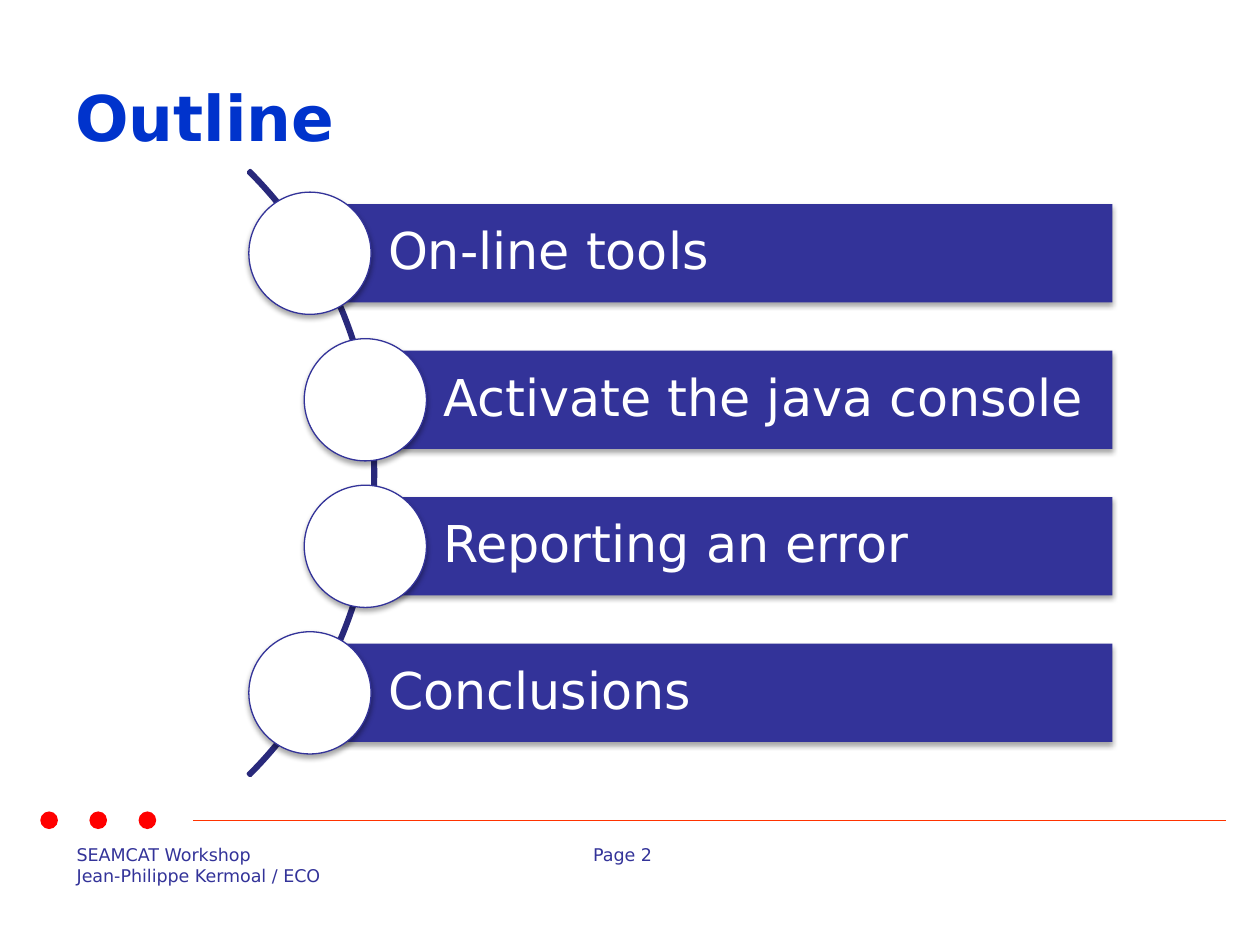
from dataclasses import dataclass

from lxml import etree
from pptx import Presentation
from pptx.dml.color import RGBColor
from pptx.enum.shapes import MSO_CONNECTOR as Connector, MSO_SHAPE as Preset
from pptx.enum.text import MSO_ANCHOR as Anchor, MSO_AUTO_SIZE as AutoSize, PP_ALIGN as Align
from pptx.oxml import parse_xml
from pptx.oxml.ns import nsdecls, qn
from pptx.util import Inches, Pt

FONT = "DejaVu Sans"
INDIGO, WHITE, RED = "333399", "FFFFFF", "FF0000"

BAR_TOP, BAR_STEP, BAR_HEIGHT, BAR_RIGHT = 1.62, 1.163, 0.78, 8.83
CIRCLE_SIZE = 0.97


@dataclass
class Topic:
    text: str
    left: float


TOPICS = [
    Topic("On-line tools", 2.46),
    Topic("Activate the java console", 2.9),
    Topic("Reporting an error", 2.9),
    Topic("Conclusions", 2.46),
]


def color(value: str) -> RGBColor:
    return RGBColor.from_string(value)


def add_span(para, text: str, size: float, ink: str, bold: bool = False) -> None:
    span = para.add_run()
    span.text = text
    span.font.name = FONT
    span.font.size = Pt(size)
    span.font.bold = bold
    span.font.color.rgb = color(ink)


def add_shape(page, preset, left: float, top: float, width: float, height: float,
              fill: str = "", line: str = "", weight: float = 0.75):
    shape = page.shapes.add_shape(
        preset, Inches(left), Inches(top), Inches(width), Inches(height))
    shape.shadow.inherit = False
    if fill:
        shape.fill.solid()
        shape.fill.fore_color.rgb = color(fill)
    else:
        shape.fill.background()
    if line:
        shape.line.color.rgb = color(line)
        shape.line.width = Pt(weight)
    else:
        shape.line.fill.background()
    return shape


def add_shadow(shape) -> None:
    effects = shape._element.spPr.find(qn("a:effectLst"))
    effects.append(parse_xml(
        f'<a:outerShdw {nsdecls("a")} blurRad="{Pt(3.1)}" dist="{Pt(1.8)}" '
        'dir="5400000" rotWithShape="0"><a:srgbClr val="000000">'
        '<a:alpha val="35000"/></a:srgbClr></a:outerShdw>'))


def add_footer(page, left: float, width: float, height: float, lines: list[str]) -> None:
    box = page.shapes.add_textbox(
        Inches(left), Inches(6.65), Inches(width), Inches(height))
    frame = box.text_frame
    frame.word_wrap = False
    frame.auto_size = AutoSize.SHAPE_TO_FIT_TEXT
    for index, line in enumerate(lines):
        para = frame.add_paragraph() if index else frame.paragraphs[0]
        add_span(para, line, 10, INDIGO)


def add_topic(page, topic: Topic, top: float) -> None:
    bar = add_shape(page, Preset.RECTANGLE, topic.left, top,
                    BAR_RIGHT - topic.left, BAR_HEIGHT, INDIGO)
    add_shadow(bar)
    frame = bar.text_frame
    frame.word_wrap = True
    frame.vertical_anchor = Anchor.MIDDLE
    frame.margin_left = Inches(0.62)
    frame.margin_top = frame.margin_right = frame.margin_bottom = Inches(0.08)
    para = frame.paragraphs[0]
    para.alignment = Align.LEFT
    para.line_spacing = 0.9
    add_span(para, topic.text, 29, WHITE)

    # The circle is centred on the left edge of its bar
    circle = add_shape(page, Preset.OVAL, topic.left - CIRCLE_SIZE / 2,
                       top + (BAR_HEIGHT - CIRCLE_SIZE) / 2,
                       CIRCLE_SIZE, CIRCLE_SIZE, WHITE, INDIGO)
    add_shadow(circle)


def main() -> None:
    deck = Presentation()
    deck.slide_width, deck.slide_height = Inches(10), Inches(7.5)
    page = deck.slides.add_slide(deck.slide_layouts[6])

    # Footer texts, rule and dots
    add_footer(page, 0.51, 2.21, 0.43, ["SEAMCAT Workshop", "Jean-Philippe Kermoal / ECO"])
    add_footer(page, 4.61, 0.82, 0.27, ["Page 2"])
    rule = page.shapes.add_connector(
        Connector.STRAIGHT, Inches(1.53), Inches(6.51), Inches(9.73), Inches(6.51))
    rule.line.color.rgb = color("FF3300")
    rule.line.width = Pt(0.75)
    etree.SubElement(rule._element.spPr, qn("a:effectLst"))
    for index in range(3):
        add_shape(page, Preset.OVAL, 0.32 + 0.39 * index, 6.44, 0.14, 0.14, RED)

    # Title
    title = page.shapes.add_textbox(Inches(0.5), Inches(0.3), Inches(9), Inches(1.25))
    title.text_frame.word_wrap = True
    title.text_frame.vertical_anchor = Anchor.MIDDLE
    add_span(title.text_frame.paragraphs[0], "Outline", 36, "0033CC", bold=True)

    # Arc from 315 to 45 degrees, then the topics along it
    arc = add_shape(page, Preset.BLOCK_ARC, -3.81, 0.36, 6.79, 6.79, line="29297B", weight=2)
    for index, value in enumerate((189, 27, 0.003)):
        arc.adjustments[index] = value
    for index, topic in enumerate(TOPICS):
        add_topic(page, topic, BAR_TOP + BAR_STEP * index)

    deck.save("out.pptx")


if __name__ == "__main__":
    main()
